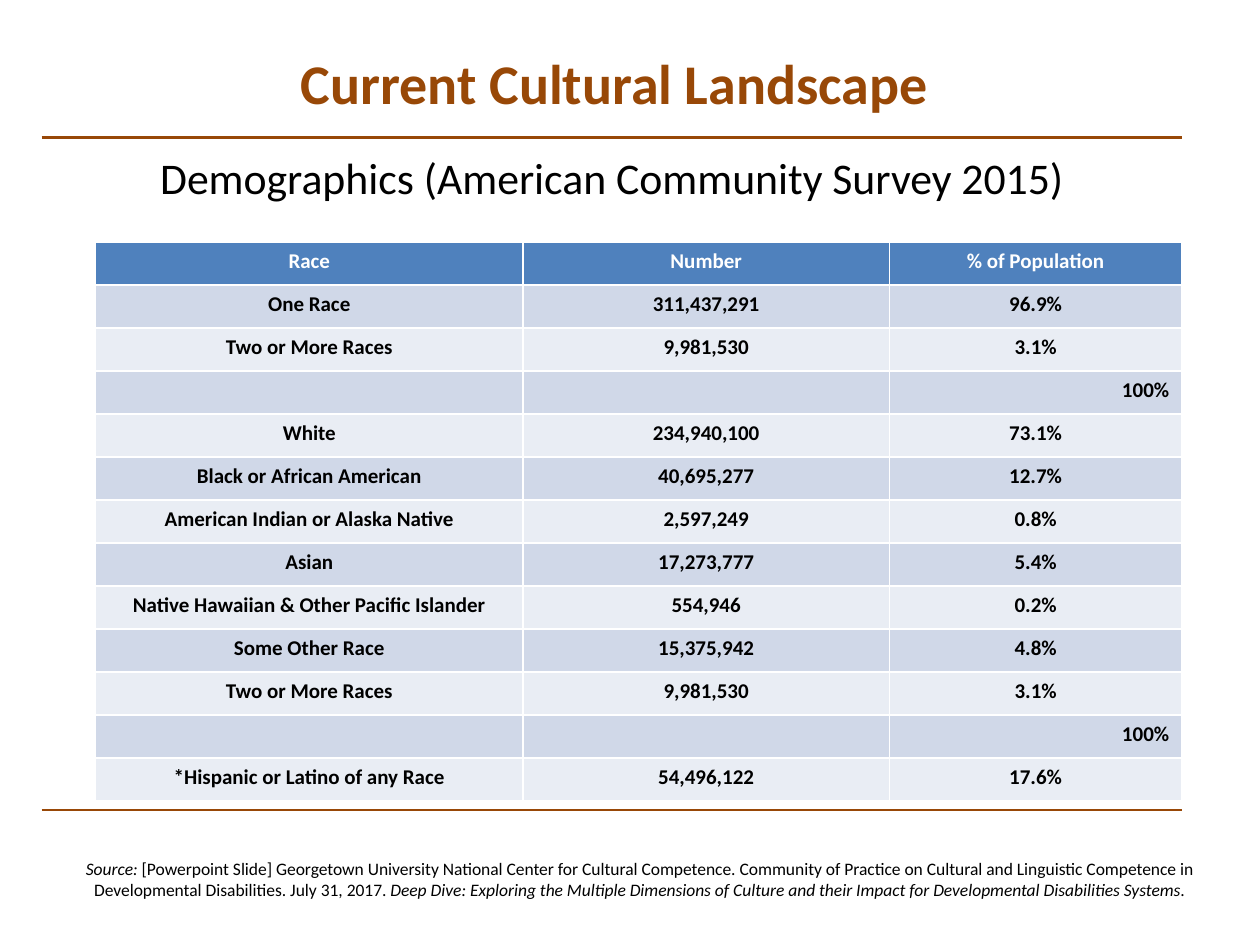
"""Build a slide with a table of population by race."""
import pptx
import pptx.dml.color
import pptx.enum.shapes
import pptx.enum.text
import pptx.util
from lxml import etree
from pptx.util import Inches

ALIGN = pptx.enum.text.PP_ALIGN
ANCHOR = pptx.enum.text.MSO_ANCHOR
BROWN, BLACK, WHITE = "984807", "000000", "FFFFFF"
HEADER_FILL, BAND_FILLS = "4F81BD", ("E9EDF4", "D0D8E8")

TITLE = "Current Cultural Landscape"
SUBTITLE = "Demographics (American Community Survey 2015)"
SOURCE = [
    ("Source: ", True),
    ("[Powerpoint Slide] Georgetown University National Center for Cultural Competence. "
     "Community of Practice on Cultural and Linguistic Competence in "
     "Developmental Disabilities. July 31, 2017. ", False),
    ("Deep Dive: Exploring the Multiple Dimensions of Culture and their Impact "
     "for Developmental Disabilities Systems", True),
    (".", False),
]
ROWS = [
    ("Race", "Number", "% of Population"),
    ("One Race", "311,437,291", "96.9%"),
    ("Two or More Races", "9,981,530", "3.1%"),
    ("", "", "100%"),
    ("White", "234,940,100", "73.1%"),
    ("Black or African American", "40,695,277", "12.7%"),
    ("American Indian or Alaska Native", "2,597,249", "0.8%"),
    ("Asian", "17,273,777", "5.4%"),
    ("Native Hawaiian & Other Pacific Islander", "554,946", "0.2%"),
    ("Some Other Race", "15,375,942", "4.8%"),
    ("Two or More Races", "9,981,530", "3.1%"),
    ("", "", "100%"),
    ("*Hispanic or Latino of any Race", "54,496,122", "17.6%"),
]
COLUMN_WIDTHS = (3.39, 2.91, 2.32)
TABLE_HEIGHT = 4.44
RULES = [(1.09, 2), (6.43, 1.5)]


def color(value):
    return pptx.dml.color.RGBColor.from_string(value)


def style(para, size, ink, bold=False, align=ALIGN.CENTER):
    para.alignment = align
    para.font.name = "Calibri"
    para.font.size = pptx.util.Pt(size)
    para.font.bold = bold
    para.font.color.rgb = color(ink)


def add_text(page, place, spans, size, ink=BLACK, bold=False, anchor=ANCHOR.TOP):
    frame = page.shapes.add_textbox(*map(Inches, place)).text_frame
    frame.word_wrap = True
    frame.vertical_anchor = anchor
    para = frame.paragraphs[0]
    for text, italic in spans:
        span = para.add_run()
        span.text = text
        span.font.italic = italic
    style(para, size, ink, bold)


def add_rule(page, top, width):
    rule = page.shapes.add_connector(
        pptx.enum.shapes.MSO_CONNECTOR.STRAIGHT,
        Inches(0.33), Inches(top), Inches(9.38), Inches(top))
    rule.line.color.rgb = color(BROWN)
    rule.line.width = pptx.util.Pt(width)
    etree.SubElement(rule._element.spPr, pptx.oxml.ns.qn("a:effectLst"))


def fill_cell(cell, text, header, fill):
    cell.fill.solid()
    cell.fill.fore_color.rgb = color(fill)
    cell.text = text
    if not text:
        cell.margin_top = cell.margin_bottom = 0
    style(cell.text_frame.paragraphs[0], 12, WHITE if header else BLACK, True,
          ALIGN.RIGHT if text == "100%" else ALIGN.CENTER)


def add_race_table(page):
    table = page.shapes.add_table(
        len(ROWS), len(COLUMN_WIDTHS), Inches(0.76), Inches(1.92),
        Inches(sum(COLUMN_WIDTHS)), Inches(TABLE_HEIGHT)).table
    for column, width in zip(table.columns, COLUMN_WIDTHS):
        column.width = Inches(width)
    for index, texts in enumerate(ROWS):
        table.rows[index].height = Inches(TABLE_HEIGHT / len(ROWS))
        fill = BAND_FILLS[index % 2] if index else HEADER_FILL
        for cell, text in zip(table.rows[index].cells, texts):
            fill_cell(cell, text, index == 0, fill)


def main():
    deck = pptx.Presentation()
    deck.slide_width, deck.slide_height = Inches(10), Inches(7.5)
    page = deck.slides.add_slide(deck.slide_layouts[6])
    add_text(page, (0.38, 0.21, 9, 0.89), [(TITLE, False)], 32, BROWN, True, ANCHOR.MIDDLE)
    for top, width in RULES:
        add_rule(page, top, width)
    add_text(page, (0.76, 1.15, 8.19, 0.52), [(SUBTITLE, False)], 25)
    add_race_table(page)
    add_text(page, (0.29, 6.76, 9.57, 0.44), SOURCE, 10)
    deck.save("out.pptx")


if __name__ == "__main__":
    main()
